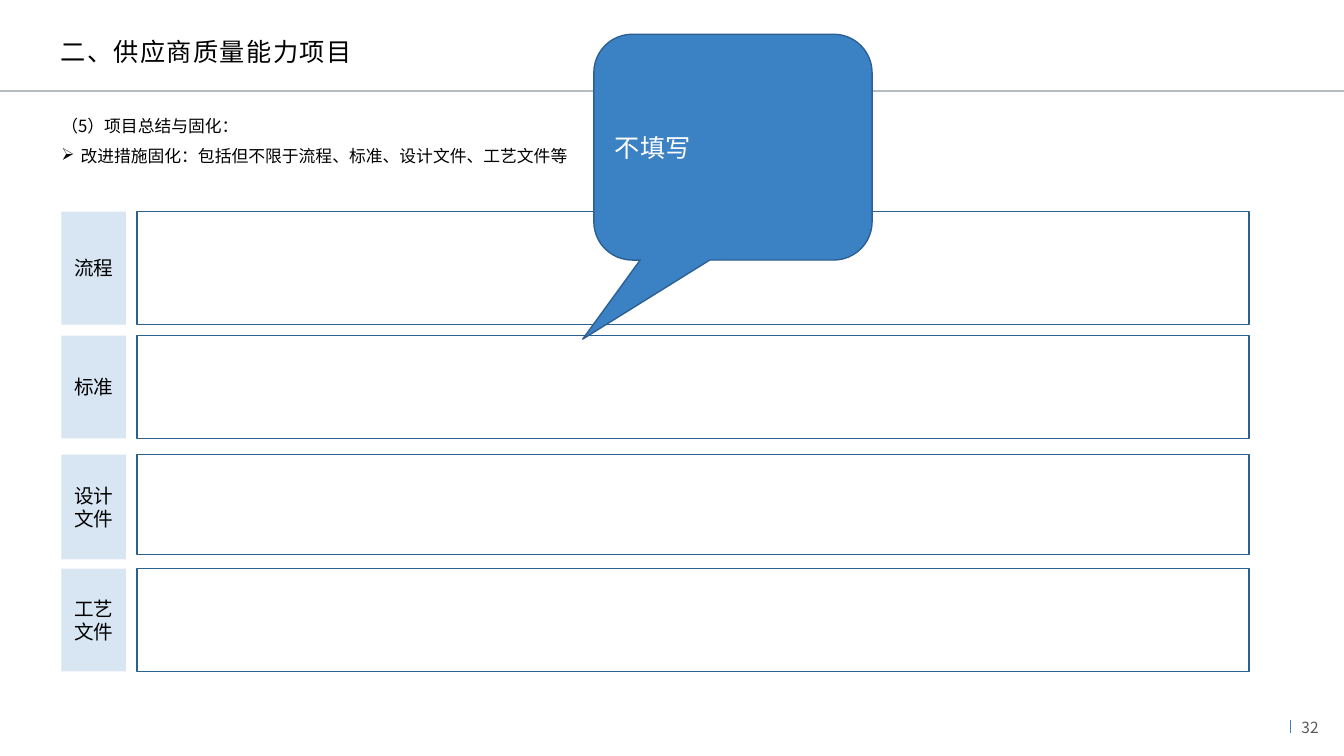
from dataclasses import dataclass

from lxml import etree
from pptx import Presentation
from pptx.dml.color import RGBColor
from pptx.enum.shapes import MSO_CONNECTOR, MSO_SHAPE
from pptx.enum.text import MSO_ANCHOR, MSO_AUTO_SIZE, PP_ALIGN
from pptx.oxml.ns import qn
from pptx.util import Inches, Pt

RECT = MSO_SHAPE.RECTANGLE
CALLOUT = MSO_SHAPE.ROUNDED_RECTANGULAR_CALLOUT
STRAIGHT = MSO_CONNECTOR.STRAIGHT
MIDDLE, TOP = MSO_ANCHOR.MIDDLE, MSO_ANCHOR.TOP
LEFT, CENTER, JUSTIFY = PP_ALIGN.LEFT, PP_ALIGN.CENTER, PP_ALIGN.JUSTIFY
GROW = MSO_AUTO_SIZE.SHAPE_TO_FIT_TEXT

BLUE, NAVY, PALE = "3B82C5", "2C6092", "D8E6F3"
WHITE, BLACK, GREY, RULE = "FFFFFF", "000000", "595959", "B4BCBF"
SANS_JP, SANS_SC, LATIN = "Noto Sans CJK JP", "Noto Sans CJK SC", "Calibri"


@dataclass
class Style:
    size: float
    font: str
    color: str = BLACK
    align: PP_ALIGN = LEFT
    lines: float = 1.0
    track: int = 0


@dataclass
class Row:
    label: str
    top: float
    tall: float
    inner: float


ROWS = [
    Row("流程", 2.1, 1.12, 1.12),
    Row("标准", 3.33, 1.02, 1.02),
    Row("设计文件", 4.51, 1.04, 0.99),
    Row("工艺文件", 5.64, 1.02, 1.02),
]


def paint(hue: str) -> RGBColor:
    return RGBColor.from_string(hue)


def write(para, text: str, style: Style) -> None:
    para.alignment = style.align
    para.line_spacing = style.lines
    run = para.add_run()
    run.text = text
    font = run.font
    font.size, font.name = Pt(style.size), style.font
    font.color.rgb = paint(style.color)
    props = font._element
    etree.SubElement(props, qn("a:ea"), typeface=style.font)
    if style.track:
        props.set("spc", str(style.track))


def add_line(slide, x1: float, y1: float, x2: float, y2: float,
             hue: str, width: float) -> None:
    line = slide.shapes.add_connector(
        STRAIGHT, Inches(x1), Inches(y1), Inches(x2), Inches(y2))
    line.line.color.rgb = paint(hue)
    line.line.width = Pt(width)
    etree.SubElement(line._element.spPr, qn("a:effectLst"))


def add_text(slide, x: float, y: float, w: float, h: float, anchor=TOP):
    box = slide.shapes.add_textbox(Inches(x), Inches(y), Inches(w), Inches(h))
    frame = box.text_frame
    frame.word_wrap = True
    frame.vertical_anchor = anchor
    return frame


def add_box(slide, kind, x: float, y: float, w: float, h: float,
            fill: str, edge: str = ""):
    box = slide.shapes.add_shape(
        kind, Inches(x), Inches(y), Inches(w), Inches(h))
    box.shadow.inherit = False
    box.fill.solid()
    box.fill.fore_color.rgb = paint(fill)
    if edge:
        box.line.color.rgb = paint(edge)
        box.line.width = Pt(1)
    else:
        box.line.fill.background()
    box.text_frame.word_wrap = True
    box.text_frame.vertical_anchor = MIDDLE
    return box


def add_bullet(para, mark: str, indent: float) -> None:
    props = para._p.get_or_add_pPr()
    props.set("marL", str(Inches(indent)))
    props.set("indent", str(-Inches(indent)))
    etree.SubElement(props, qn("a:buChar"), char=mark)


def main() -> None:
    deck = Presentation()
    deck.slide_width, deck.slide_height = Inches(13.33), Inches(7.5)
    slide = deck.slides.add_slide(deck.slide_layouts[6])

    # Header rule and page number
    add_line(slide, 0, 0.9, 13.33, 0.9, RULE, 1.5)
    add_line(slide, 12.8, 7.14, 12.8, 7.27, BLUE, 1)
    page = add_text(slide, 12.81, 7.07, 0.5, 0.25)
    write(page.paragraphs[0], "32", Style(11, SANS_JP, GREY))

    # Title
    title = add_text(slide, 0.6, 0.29, 10.65, 0.47, MIDDLE)
    title.margin_left = title.margin_right = 0
    title.margin_top = title.margin_bottom = 0
    write(title.paragraphs[0], "二、供应商质量能力项目",
          Style(18, SANS_JP, lines=0.9, track=100))

    # Introduction
    intro = add_text(slide, 0.51, 1, 8.68, 0.71)
    intro.auto_size = GROW
    body = Style(12, SANS_SC, align=JUSTIFY, lines=1.5)
    write(intro.paragraphs[0], "（5）项目总结与固化：", body)
    point = intro.add_paragraph()
    add_bullet(point, "➢", 0.19)
    write(point, "改进措施固化：包括但不限于流程、标准、设计文件、工艺文件等", body)

    # Labelled rows
    label = Style(14, LATIN, align=CENTER)
    for row in ROWS:
        tag = add_box(slide, RECT, 0.61, row.top, 0.64, row.tall, PALE)
        write(tag.text_frame.paragraphs[0], row.label, label)
        add_box(slide, RECT, 1.36, row.top, 11.03, row.inner, WHITE, NAVY)

    # Callout
    note = add_box(slide, CALLOUT, 5.89, 0.34, 2.76, 2.24, BLUE, NAVY)
    for spot, value in enumerate((-0.54, 0.85, 0.17)):
        note.adjustments[spot] = value
    write(note.text_frame.paragraphs[0], "不填写", Style(18, SANS_JP, WHITE))

    deck.save("out.pptx")


if __name__ == "__main__":
    main()
